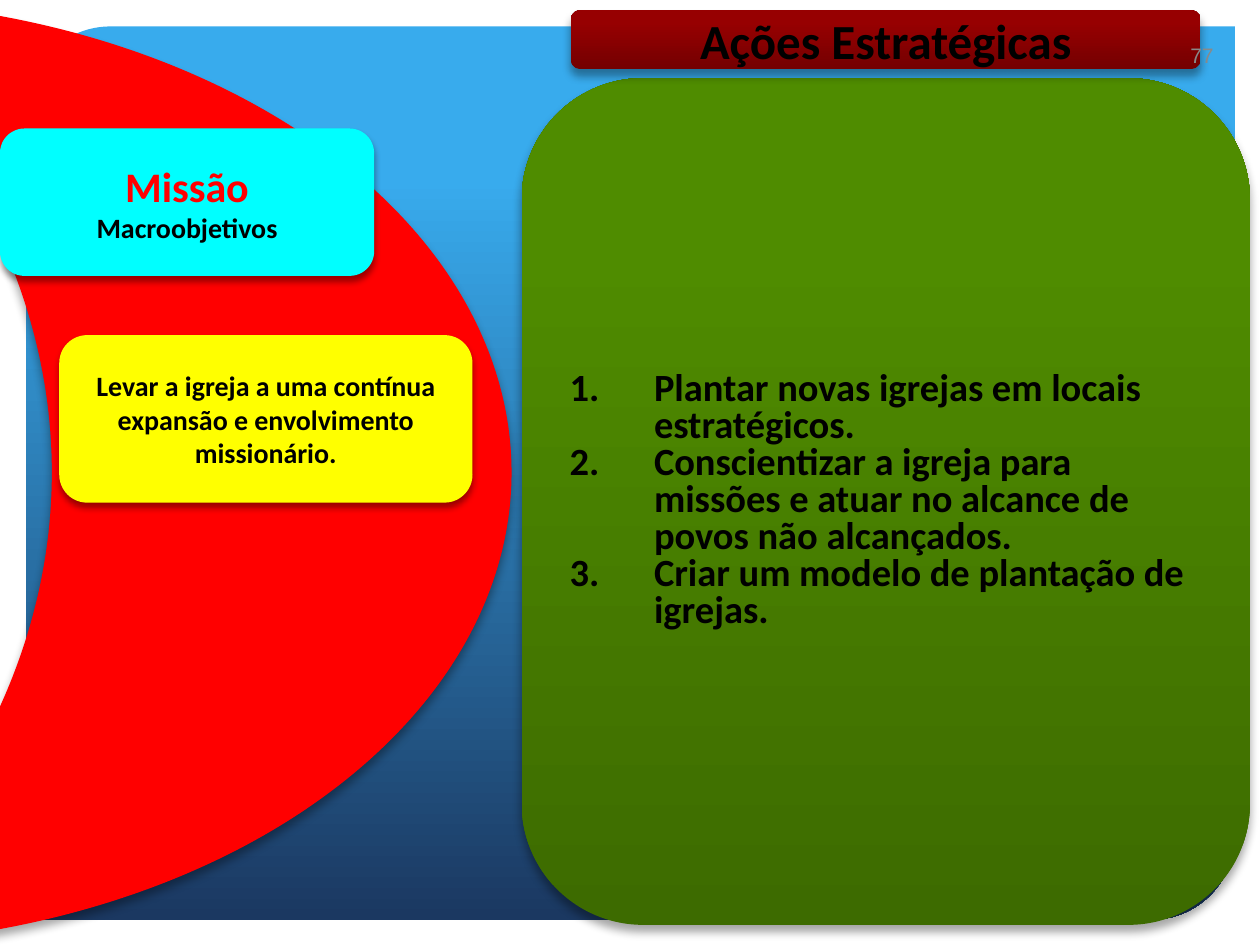
from lxml.etree import SubElement
from pptx import Presentation
from pptx.dml.color import RGBColor
from pptx.enum.shapes import MSO_SHAPE as Preset
from pptx.enum.text import MSO_ANCHOR as Anchor, PP_ALIGN as Align
from pptx.oxml.ns import qn
from pptx.util import Inches, Pt

DEEP_SHADOW = (5, 4, 35)
SOFT_SHADOW = (4, 3, 40)
ACTIONS = [
    "Plantar novas igrejas em locais estratégicos.",
    "Conscientizar a igreja para missões e atuar no alcance de povos não alcançados.",
    "Criar um modelo de plantação de igrejas.",
]


def color(value):
    return RGBColor.from_string(value)


def set_all(target, values):
    for name, value in values.items():
        setattr(target, name, value)


def paint(panel, colors, stops=(0, 1), angle=270):
    if len(colors) == 1:
        panel.fill.solid()
        panel.fill.fore_color.rgb = color(colors[0])
        return
    panel.fill.gradient()
    panel.fill.gradient_angle = angle
    for stop, position, value in zip(panel.fill.gradient_stops, stops, colors):
        stop.position = position
        stop.color.rgb = color(value)


def cast_shadow(panel, blur, distance, opacity):
    effects = panel._element.spPr.find(qn("a:effectLst"))
    outer = SubElement(effects, qn("a:outerShdw"), blurRad=str(Pt(blur)),
                       dist=str(Pt(distance)), dir="5400000", rotWithShape="0")
    black = SubElement(outer, qn("a:srgbClr"), val="000000")
    SubElement(black, qn("a:alpha"), val=str(opacity * 1000))


def add_panel(slide, preset, box, colors, shadow=None, **gradient):
    panel = slide.shapes.add_shape(preset, *map(Inches, box))
    panel.line.fill.background()
    panel.shadow.inherit = False
    paint(panel, colors, **gradient)
    if shadow:
        cast_shadow(panel, *shadow)
    return panel


def write(holder, lines, align=Align.CENTER, spacing=None):
    frame = holder.text_frame
    set_all(frame, {"word_wrap": True, "vertical_anchor": Anchor.MIDDLE})
    for index, (text, size, ink) in enumerate(lines):
        paragraph = frame.add_paragraph() if index else frame.paragraphs[0]
        set_all(paragraph, {"alignment": align, "line_spacing": spacing})
        run = paragraph.add_run()
        run.text = text
        set_all(run.font, {"name": "Calibri", "size": Pt(size), "bold": True})
        run.font.color.rgb = color(ink)
    return frame.paragraphs


def add_backdrop(slide, box):
    backdrop = add_panel(slide, Preset.ROUND_2_DIAG_RECTANGLE, box,
                         ["38ABED", "1B3861"], stops=(0.17, 1))
    backdrop.adjustments[0] = 0.094
    backdrop.adjustments[1] = 0


def add_crescent(slide, box):
    crescent = add_panel(slide, Preset.MOON, box, ["FF0000"], DEEP_SHADOW)
    crescent.rotation = 180
    crescent.adjustments[0] = 0.667


def add_actions(slide, box):
    panel = add_panel(slide, Preset.ROUNDED_RECTANGLE, box, ["3D6B00", "4F8C00"],
                      DEEP_SHADOW, stops=(0, 0.8), angle=90)
    lines = [(action, 22, "000000") for action in ACTIONS]
    for paragraph in write(panel, lines, Align.LEFT, 0.8):
        properties = paragraph._p.get_or_add_pPr()
        properties.set("marL", str(Inches(0.67)))
        properties.set("indent", str(Inches(-0.67)))
        SubElement(properties, qn("a:buFont"), typeface="+mj-lt")
        SubElement(properties, qn("a:buAutoNum"), type="arabicPeriod")


def add_heading(slide, box):
    heading = add_panel(slide, Preset.ROUNDED_RECTANGLE, box, ["740001", "970001"],
                        DEEP_SHADOW, stops=(0, 0.8), angle=90)
    write(heading, [("Ações Estratégicas", 28, "000000")])


def add_card(slide, box, fill, lines):
    card = add_panel(slide, Preset.ROUNDED_RECTANGLE, box, [fill], SOFT_SHADOW)
    write(card, lines)


def add_page_number(slide, box):
    number = slide.shapes.add_textbox(*map(Inches, box))
    paragraph = write(number, [("77", 12, "898989")], Align.RIGHT)[0]
    set_all(paragraph.runs[0].font, {"name": "Arial", "bold": False})


def main():
    deck = Presentation()
    set_all(deck, {"slide_width": Inches(10), "slide_height": Inches(7.5)})
    slide = deck.slides.add_slide(deck.slide_layouts[6])
    add_backdrop(slide, (0.21, 0.21, 9.59, 7.09))
    add_crescent(slide, (-1.41, 0, 5.47, 7.5))
    add_actions(slide, (4.14, 0.62, 5.78, 6.72))
    add_heading(slide, (4.53, 0.08, 5, 0.47))
    add_card(slide, (0, 1.02, 2.97, 1.17), "00FFFF",
             [("Missão", 24, "FF0000"), ("Macroobjetivos", 16, "000000")])
    add_card(slide, (0.47, 2.66, 3.28, 1.33), "FFFF00",
             [("Levar a igreja a uma contínua expansão e envolvimento missionário.",
               16, "000000")])
    add_page_number(slide, (9.19, 0.24, 0.54, 0.4))
    deck.save("out.pptx")


if __name__ == "__main__":
    main()
